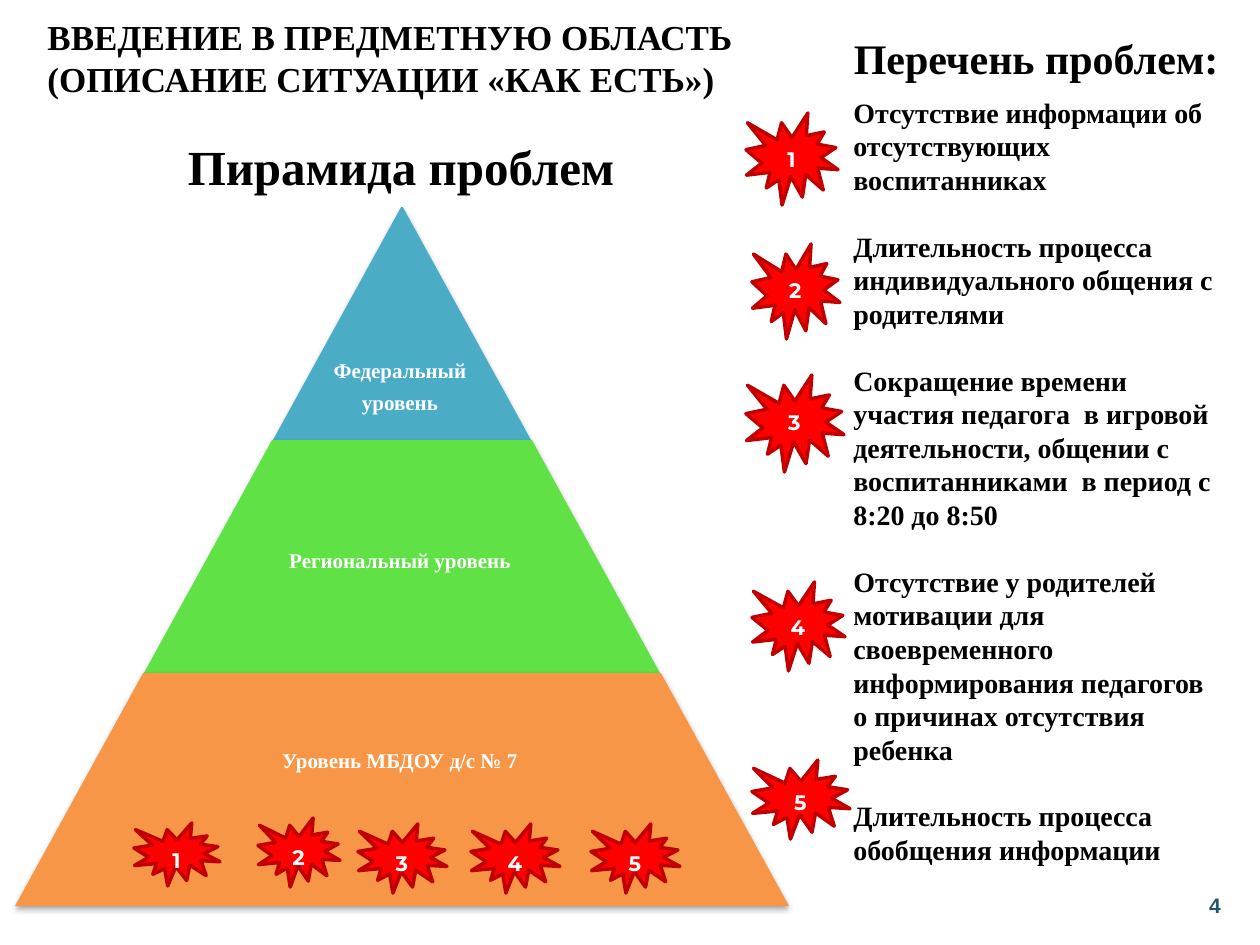
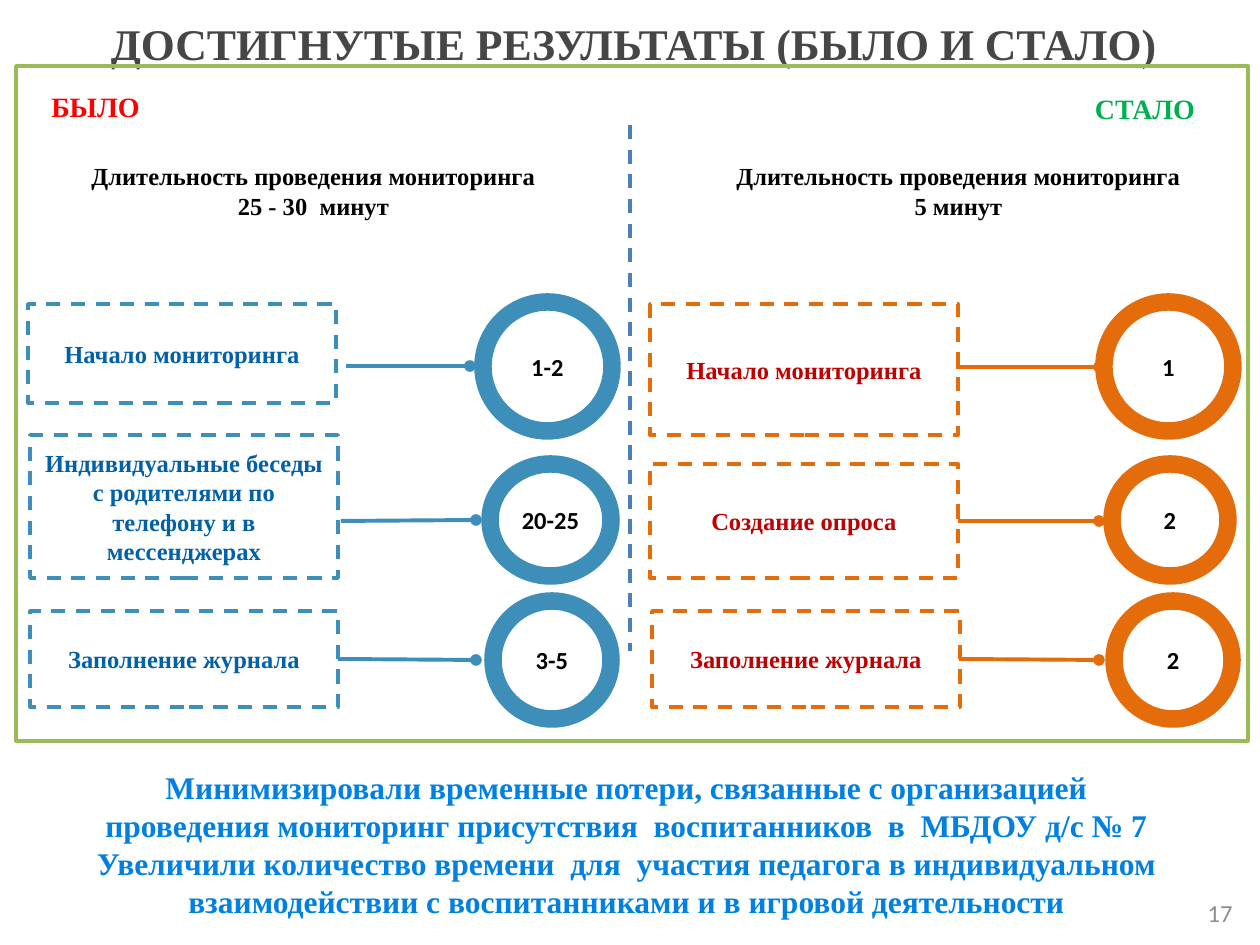
from dataclasses import dataclass

from lxml import etree
from pptx import Presentation
from pptx import util as u
from pptx.dml.color import RGBColor
from pptx.enum import dml, shapes, text
from pptx.oxml.ns import qn


@dataclass(frozen=True)
class Theme:
    serif: str = "Times New Roman"
    sans: str = "Calibri"
    number: str = "Arial"
    badge: str = "Montserrat"
    black: str = "000000"
    white: str = "FFFFFF"
    red: str = "FF0000"
    dark_red: str = "C00000"
    green: str = "00B050"
    blue: str = "3D8EB9"
    orange: str = "E46C0A"
    step_blue: str = "0060A8"
    result_blue: str = "0081E2"
    title_grey: str = "464646"
    page_grey: str = "8C8C8C"
    page_teal: str = "215968"
    frame: str = "9BBB59"
    divider: str = "4B7EBC"
    huge: int = 28
    heading: int = 24
    title: int = 20
    wide_title: int = 25
    result: int = 18
    body: int = 16
    step: int = 14
    small: int = 12


T = Theme()
PX_PER_INCH = 126
LEFT, CENTER, RIGHT = text.PP_ALIGN.LEFT, text.PP_ALIGN.CENTER, text.PP_ALIGN.RIGHT
TOP, MIDDLE = text.MSO_ANCHOR.TOP, text.MSO_ANCHOR.MIDDLE
SHAPE = shapes.MSO_SHAPE

# Content: problem pyramid
SITUATION = ["ВВЕДЕНИЕ В ПРЕДМЕТНУЮ ОБЛАСТЬ", "(ОПИСАНИЕ СИТУАЦИИ «КАК ЕСТЬ»)"]
LEVELS = [  # lines, fill, middle of the label
    (["Федеральный", "уровень"], "4BACC6", 386),
    (["Региональный уровень"], "60E146", 560),
    (["Уровень МБДОУ д/с № 7"], "F79646", 760),
]
PROBLEMS = [  # wording, badge in the list, badge on the pyramid
    ("Отсутствие информации об отсутствующих воспитанниках",
     (746, 113, 92, 92), (134, 823, 86, 63)),
    ("Длительность процесса индивидуального общения с родителями",
     (752, 244, 88, 95), (258, 818, 82, 69)),
    ("Сокращение времени участия педагога  в игровой деятельности, "
     "общении с воспитанниками  в период с 8:20 до 8:50",
     (746, 375, 98, 97), (358, 824, 89, 69)),
    ("Отсутствие у родителей мотивации для своевременного "
     "информирования педагогов о причинах отсутствия ребенка",
     (752, 582, 93, 89), (471, 824, 89, 69)),
    ("Длительность процесса обобщения информации",
     (752, 760, 98, 79), (591, 824, 89, 69)),
]

# Content: before and after; a step is wording, minutes, box, circle, link
MONITORING = "Длительность проведения мониторинга"
COLUMNS = [
    dict(label="БЫЛО", label_box=(5, 83, 181, 47), label_color=T.red,
         total="25 - 30  минут", total_x=44, color=T.blue, ink=T.step_blue,
         steps=[
             ("Начало мониторинга", "1-2",
              (28, 304, 308, 99), (483, 302, 129, 129), (346, 366, 470, 366)),
             ("Индивидуальные беседы с родителями по телефону и в мессенджерах",
              "20-25",
              (30, 435, 308, 143), (490, 464, 121, 112), (341, 521, 476, 520)),
             ("Заполнение журнала", "3-5",
              (30, 611, 308, 96), (493, 601, 118, 118), (338, 659, 476, 660)),
         ]),
    dict(label="СТАЛО", label_box=(1057, 85, 176, 47), label_color=T.green,
         total="5 минут", total_x=689, color=T.orange, ink=T.dark_red,
         steps=[
             ("Начало мониторинга", "1",
              (650, 304, 308, 131), (1104, 302, 129, 129), (956, 367, 1099, 367)),
             ("Создание опроса", "2",
              (650, 464, 308, 114), (1112, 464, 116, 112), (958, 521, 1099, 521)),
             ("Заполнение журнала", "2",
              (652, 611, 308, 96), (1114, 601, 118, 118), (959, 659, 1099, 660)),
         ]),
]
RESULTS = [
    "Минимизировали временные потери, связанные с организацией",
    "проведения мониторинг присутствия  воспитанников  в  МБДОУ д/с № 7",
    "Увеличили количество времени  для  участия педагога в индивидуальном "
    "взаимодействии с воспитанниками и в игровой деятельности",
]


def px(n):
    return u.Emu(round(n * 914400 / PX_PER_INCH))


def rgb(color):
    return RGBColor.from_string(color)


def write(sp, lines, size, color, font=T.serif, align=CENTER, anchor=TOP,
          bold=True, gap=0):
    tf = sp.text_frame
    tf.word_wrap = True
    tf.vertical_anchor = anchor
    for i, line in enumerate(lines):
        p = tf.add_paragraph() if i else tf.paragraphs[0]
        p.text = line
        p.alignment = align
        p.space_after = u.Pt(gap)
        p.font.size = u.Pt(size)
        p.font.name = font
        p.font.bold = bold
        p.font.color.rgb = rgb(color)


def add_text(s, box, lines, size, color, **style):
    write(s.shapes.add_textbox(*map(px, box)), lines, size, color, **style)


def style_line(line, color, width, dashed=False):
    line.color.rgb = rgb(color)
    line.width = u.Pt(width)
    if dashed:
        line.dash_style = dml.MSO_LINE.DASH


def add_shape(s, kind, box, fill=None, line=None, width=2, dashed=False):
    sp = s.shapes.add_shape(kind, *map(px, box))
    sp.shadow.inherit = False
    if fill:
        sp.fill.solid()
        sp.fill.fore_color.rgb = rgb(fill)
    else:
        sp.fill.background()
    if line:
        style_line(sp.line, line, width, dashed)
    else:
        sp.line.fill.background()
    return sp


def add_line(s, ends, color, width, dashed=False, dot=False):
    cx = s.shapes.add_connector(shapes.MSO_CONNECTOR.STRAIGHT, *map(px, ends))
    style_line(cx.line, color, width, dashed)
    if dot:
        etree.SubElement(cx.line._get_or_add_ln(), qn("a:tailEnd"), type="oval")
    etree.SubElement(cx._element.spPr, qn("a:effectLst"))


def drop_shadow(sp):
    effects = sp._element.spPr.find(qn("a:effectLst"))
    shadow = etree.SubElement(effects, qn("a:outerShdw"), blurRad=str(u.Pt(3.1)),
                              dist=str(u.Pt(1.8)), dir="5400000", rotWithShape="0")
    color = etree.SubElement(shadow, qn("a:srgbClr"), val=T.black)
    etree.SubElement(color, qn("a:alpha"), val="35000")


def add_badge(s, box, number):
    sp = add_shape(s, SHAPE.EXPLOSION1, box, T.red, T.dark_red)
    write(sp, [str(number)], T.small, T.white, font=T.badge)


def build_pyramid(prs):
    s = prs.slides.add_slide(prs.slide_layouts[6])
    # Headings and page number
    add_text(s, (35, 0, 735, 116), SITUATION, T.title, T.black,
             align=LEFT, anchor=MIDDLE)
    add_text(s, (141, 141, 520, 50), ["Пирамида проблем"], T.huge, T.black,
             anchor=MIDDLE)
    add_text(s, (800, 26, 431, 63), ["Перечень проблем:"], T.heading, T.black,
             align=RIGHT)
    add_text(s, (1191, 886, 48, 39), ["4"], T.small, T.page_teal,
             font=T.number, anchor=MIDDLE)

    # Pyramid: each level is one step wider than the one above
    middle, top, step, height = 402, 207, 258, 233
    for i, (lines, fill, label_y) in enumerate(LEVELS):
        width = step * (i + 1)
        sp = add_shape(s, SHAPE.TRAPEZOID,
                       (middle - width / 2, top + height * i, width, height), fill)
        sp.adjustments[0] = 0.55
        drop_shadow(sp)
        add_text(s, (middle - 152, label_y - 45, 300, 90), lines, T.small, T.white,
                 anchor=MIDDLE, gap=4)

    # Problems and their badges
    add_text(s, (841, 89, 396, 832), [wording for wording, _, _ in PROBLEMS],
             T.body, T.black, align=LEFT, gap=19)
    for n, (_, *places) in enumerate(PROBLEMS, 1):
        for box in places:
            add_badge(s, box, n)


def build_results(prs):
    s = prs.slides.add_slide(prs.slide_layouts[6])
    # Title, frame and divider
    add_line(s, (630, 125, 630, 651), T.divider, 2, dashed=True)
    add_text(s, (10, -10, 1247, 106), ["ДОСТИГНУТЫЕ РЕЗУЛЬТАТЫ (БЫЛО И СТАЛО)"],
             T.wide_title, T.title_grey, anchor=MIDDLE)
    add_shape(s, SHAPE.RECTANGLE, (16, 66, 1232, 675), line=T.frame)

    # Both columns
    for col in COLUMNS:
        add_text(s, col["label_box"], [col["label"]], T.body, col["label_color"])
        add_text(s, (col["total_x"], 155, 539, 72), [MONITORING, col["total"]],
                 T.step, T.black)
        for wording, minutes, box, circle, link in col["steps"]:
            add_line(s, link, col["color"], 2.25, dot=True)
            sp = add_shape(s, SHAPE.FLOWCHART_CONNECTOR, circle, T.white,
                           col["color"], 10)
            sp.text_frame.margin_left = sp.text_frame.margin_right = 0
            write(sp, [minutes], T.step, T.black, font=T.sans, anchor=MIDDLE)
            sp = add_shape(s, SHAPE.RECTANGLE, box, line=col["color"], dashed=True)
            write(sp, [wording], T.step, col["ink"], anchor=MIDDLE)

    # Outcome and page number
    add_text(s, (4, 762, 1245, 165), RESULTS, T.result, T.result_blue)
    add_text(s, (1184, 888, 61, 50), ["17"], T.step, T.page_grey, font=T.sans,
             align=RIGHT, anchor=MIDDLE, bold=False)


def main():
    prs = Presentation()
    prs.slide_width, prs.slide_height = px(1260), px(945)
    build_pyramid(prs)
    build_results(prs)
    prs.save("out.pptx")


if __name__ == "__main__":
    main()
